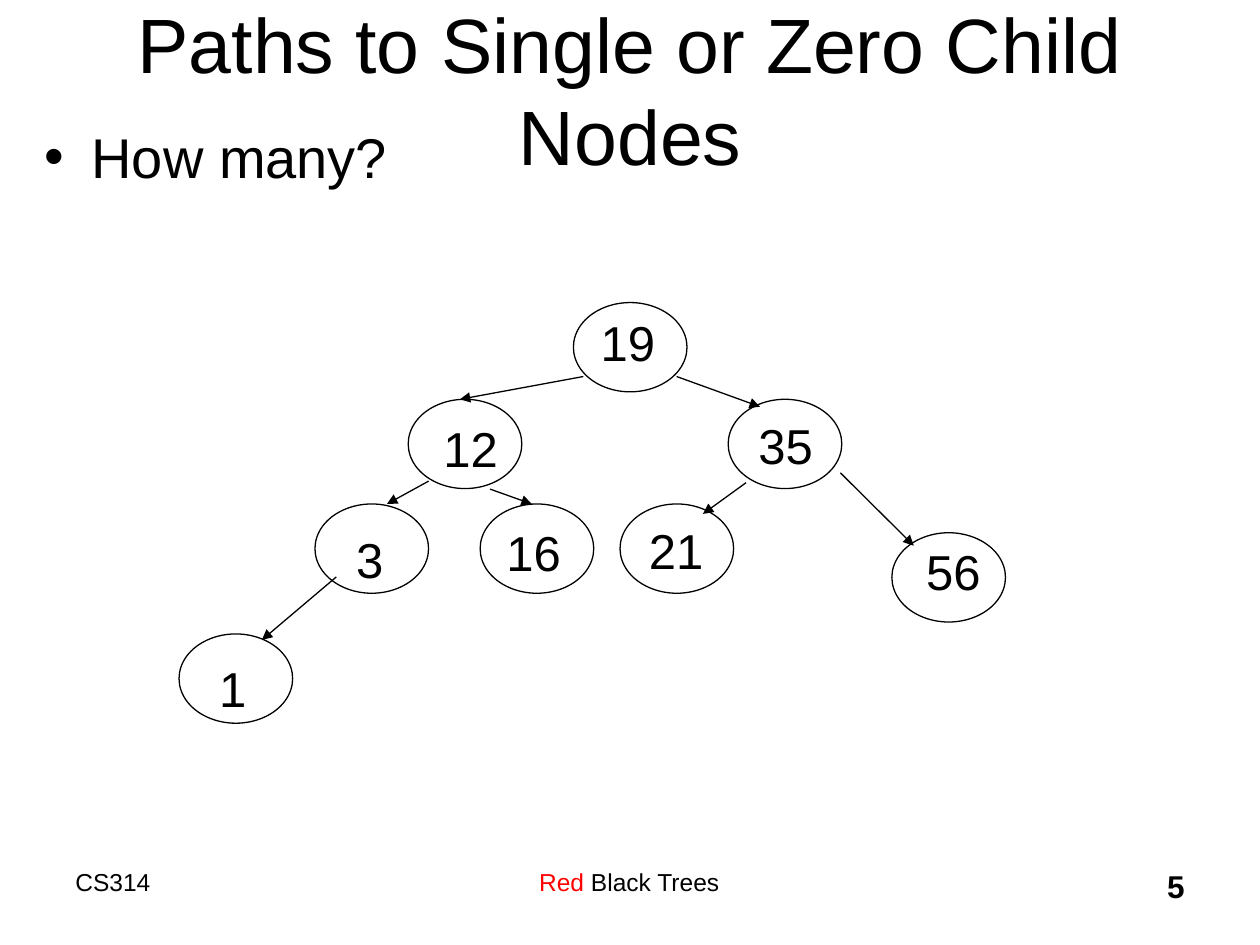
import pptx
import pptx.util
import pptx.dml.color
import pptx.enum.shapes
import pptx.enum.text
import pptx.oxml
import pptx.oxml.ns
from pptx.util import Cm, Pt

ALIGN = pptx.enum.text.PP_ALIGN
FIT = pptx.enum.text.MSO_AUTO_SIZE
ANCHOR = pptx.enum.text.MSO_ANCHOR
qn = pptx.oxml.ns.qn


def rgb(value):
    return pptx.dml.color.RGBColor.from_string(value)


def write(p, runs, size, bold=False, **layout):
    """Fill a paragraph with (text, colour) runs and apply its layout values."""
    for name, value in layout.items():
        setattr(p, name, value)
    for text, color in runs:
        r = p.add_run()
        r.text = text
        font = {"name": "Arial", "size": Pt(size), "bold": bold}
        for name, value in font.items():
            setattr(r.font, name, value)
        r.font.color.rgb = rgb(color)


prs = pptx.Presentation()
prs.slide_width, prs.slide_height = Cm(25.4), Cm(19.05)
s = prs.slides.add_slide(prs.slide_layouts[1])
BLACK = "000000"

# Title and bullet
title, body = s.placeholders
for sp, box, anchor in [
    (title, (1.91, 0.2, 21.59, 3.18), ANCHOR.MIDDLE),
    (body, (0.64, 2.34, 24.13, 15.24), ANCHOR.TOP),
]:
    sp.left, sp.top, sp.width, sp.height = map(Cm, box)
    format_values = {"word_wrap": True, "auto_size": FIT.NONE, "vertical_anchor": anchor}
    for name, value in format_values.items():
        setattr(sp.text_frame, name, value)
write(title.text_frame.paragraphs[0], [("Paths to Single or Zero Child Nodes", BLACK)], 44,
      alignment=ALIGN.CENTER)
p = body.text_frame.paragraphs[0]
write(p, [("How many?", BLACK)], 32, space_before=Pt(93))
pPr = p._p.get_or_add_pPr()
pPr.set("marL", str(Cm(0.95)))
pPr.set("indent", str(-Cm(0.95)))
pptx.oxml.parse_xml
bullet = pPr.makeelement(qn("a:buChar"), {"char": "•"})
pPr.append(bullet)

# Footer: course, topic, slide number
for left, width, runs, size, bold, align, before in [
    (1.27, 6.35, [("CS314", BLACK)], 14, False, ALIGN.LEFT, 0),
    (7.82, 9.73, [("Red", "FF0000"), (" Black Trees", BLACK)], 14, False, ALIGN.CENTER, 16),
    (18.85, 5.28, [("5", BLACK)], 18, True, ALIGN.RIGHT, 0),
]:
    tf = s.shapes.add_textbox(Cm(left), Cm(17.35), Cm(width), Cm(1.27)).text_frame
    tf.word_wrap = True
    write(tf.paragraphs[0], runs, size, bold, alignment=align, space_before=Pt(before))

# Tree nodes: value, ellipse corner, label corner
for value, x, y, label_x, label_y in [
    ("19", 11.56, 6.1, 11.86, 6.17),
    ("12", 8.23, 8.05, 8.69, 8.31),
    ("35", 14.68, 8.05, 15.04, 8.26),
    ("3", 6.35, 10.16, 6.93, 10.54),
    ("16", 9.68, 10.16, 9.96, 10.41),
    ("21", 12.5, 10.16, 12.83, 10.36),
    ("56", 17.98, 10.74, 18.42, 10.8),
    ("1", 3.61, 12.78, 4.17, 13.16),
]:
    sp = s.shapes.add_shape(pptx.enum.shapes.MSO_SHAPE.OVAL, Cm(x), Cm(y), Cm(2.29), Cm(1.8))
    sp.shadow.inherit = False
    sp.fill.background()
    sp.line.color.rgb = rgb(BLACK)
    sp.line.width = Pt(0.75)
    label_width = 1.63 if len(value) == 2 else 1.07
    tf = s.shapes.add_textbox(Cm(label_x), Cm(label_y), Cm(label_width), Cm(1.45)).text_frame
    tf.word_wrap = False
    tf.auto_size = FIT.SHAPE_TO_FIT_TEXT
    write(tf.paragraphs[0], [(value, BLACK)], 28, space_before=Pt(5.6))

# Arrows from parent to child
for ends in [
    (11.76, 7.59, 9.27, 8.05),
    (13.64, 7.59, 15.32, 8.2),
    (8.64, 9.7, 7.8, 10.16),
    (9.88, 9.86, 10.72, 10.16),
    (15.04, 9.73, 14.17, 10.36),
    (16.94, 9.53, 18.42, 11),
    (6.78, 11.63, 5.28, 12.9),
]:
    arrow = s.shapes.add_connector(pptx.enum.shapes.MSO_CONNECTOR.STRAIGHT, *map(Cm, ends))
    arrow.line.color.rgb = rgb(BLACK)
    arrow.line.width = Pt(0.75)
    ln = arrow.line._get_or_add_ln()
    ln.append(ln.makeelement(qn("a:tailEnd"), {"type": "triangle"}))
    spPr = arrow._element.spPr
    spPr.append(spPr.makeelement(qn("a:effectLst"), {}))

prs.save("out.pptx")
